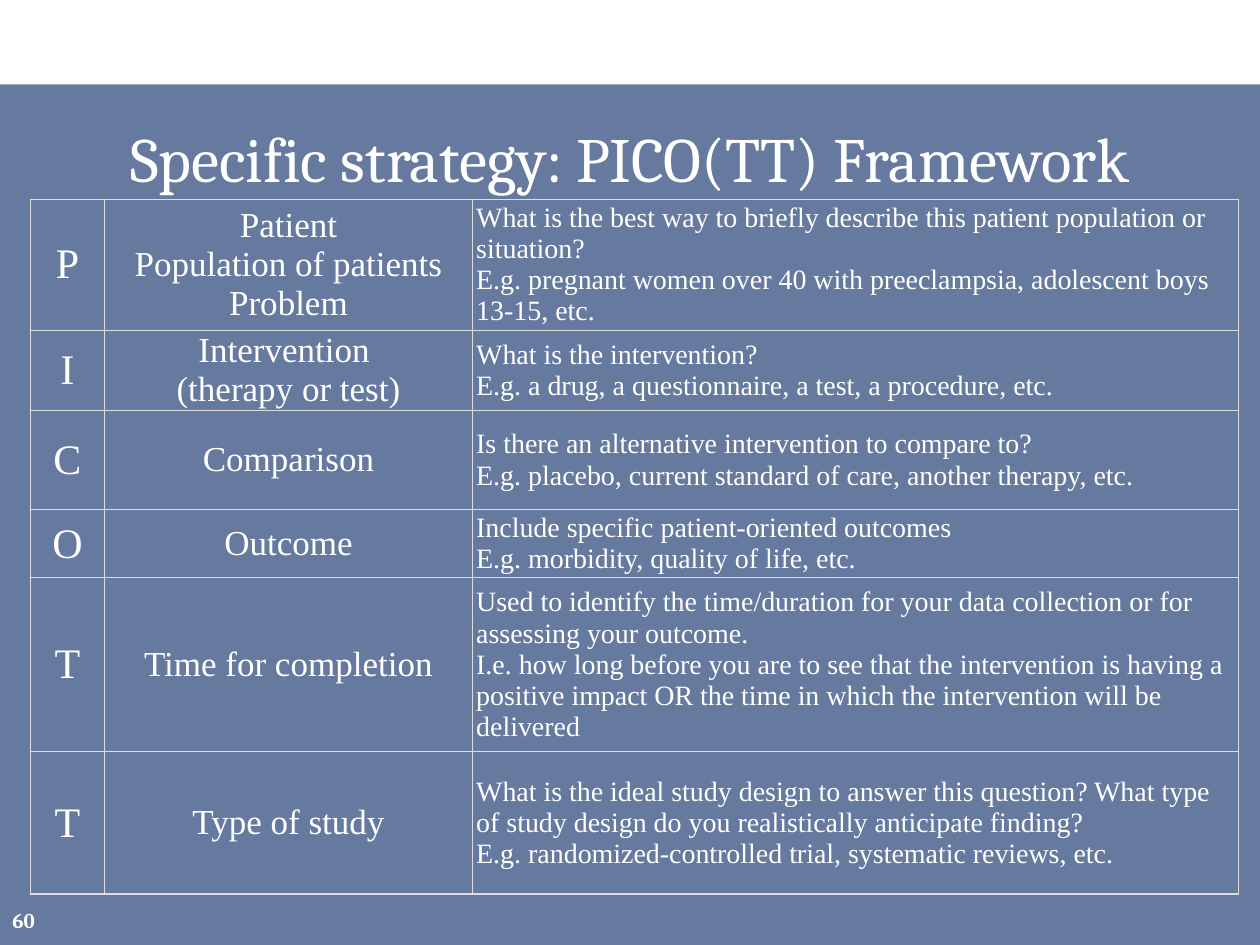
import lxml.etree
import pptx
import pptx.dml.color
import pptx.enum.shapes
import pptx.enum.text
import pptx.oxml
import pptx.oxml.ns
import pptx.util
from pptx.util import Inches

COLORS = {"panel": "002060", "text": "FFFFFF", "border": "DDDDDD"}
ALIGN = pptx.enum.text.PP_ALIGN
MIDDLE = pptx.enum.text.MSO_ANCHOR.MIDDLE
COLUMNS = [(0.59, 24, ALIGN.CENTER), (2.92, 20, ALIGN.CENTER), (6.08, 16, ALIGN.LEFT)]
FRAMEWORK = [
    (1.04, "P", "Patient\nPopulation of patients\nProblem",
     "What is the best way to briefly describe this patient population or situation?\n"
     "E.g. pregnant women over 40 with preeclampsia, adolescent boys 13-15, etc."),
    (0.54, "I", "Intervention \n(therapy or test)",
     "What is the intervention?\n"
     "E.g. a drug, a questionnaire, a test, a procedure, etc."),
    (0.79, "C", "Comparison",
     "Is there an alternative intervention to compare to?\n"
     "E.g. placebo, current standard of care, another therapy, etc."),
    (0.54, "O", "Outcome",
     "Include specific patient-oriented outcomes\n"
     "E.g. morbidity, quality of life, etc."),
    (1.38, "T", "Time for completion",
     "Used to identify the time/duration for your data collection or for assessing your outcome.\n"
     "I.e. how long before you are to see that the intervention is having a positive impact "
     "OR the time in which the intervention will be delivered"),
    (1.13, "T", "Type of study",
     "What is the ideal study design to answer this question? "
     "What type of study design do you realistically anticipate finding?\n"
     "E.g. randomized-controlled trial, systematic reviews, etc."),
]


class SlideBuilder:
    """Holds the style and the current slide, and adds each kind of element."""

    def __init__(self, slide, heading_font="Cambria", body_font="Times New Roman"):
        self.slide = slide
        self.heading_font = heading_font
        self.body_font = body_font

    def color(self, name):
        return pptx.dml.color.RGBColor.from_string(COLORS[name])

    def set_text(self, frame, text, size, font, align, bold=False):
        frame.text = text
        for paragraph in frame.paragraphs:
            paragraph.alignment = align
            paragraph.font.size = pptx.util.Pt(size)
            paragraph.font.name = font
            paragraph.font.bold = bold
            paragraph.font.color.rgb = self.color("text")

    def panel(self, left, top, width, height, opacity):
        panel = self.slide.shapes.add_shape(
            pptx.enum.shapes.MSO_SHAPE.RECTANGLE,
            Inches(left), Inches(top), Inches(width), Inches(height))
        panel.shadow.inherit = False
        panel.line.fill.background()
        panel.fill.solid()
        panel.fill.fore_color.rgb = self.color("panel")
        tint = panel._element.spPr.find(".//" + pptx.oxml.ns.qn("a:srgbClr"))
        lxml.etree.SubElement(tint, pptx.oxml.ns.qn("a:alpha"), val=str(opacity * 1000))
        self.slide.shapes._spTree.insert(2, panel._element)

    def title(self, text, left, top, width, height):
        title = self.slide.shapes.title
        title.left, title.top = Inches(left), Inches(top)
        title.width, title.height = Inches(width), Inches(height)
        self.set_text(title.text_frame, text, 36, self.heading_font, ALIGN.CENTER)
        title.text_frame.vertical_anchor = MIDDLE

    def page_number(self, text, left, top, width, height):
        box = self.slide.shapes.add_textbox(
            Inches(left), Inches(top), Inches(width), Inches(height))
        self.set_text(box.text_frame, text, 12, self.heading_font, ALIGN.LEFT, bold=True)
        box.text_frame.word_wrap = True
        box.text_frame.vertical_anchor = MIDDLE

    def border(self, cell):
        for position, side in enumerate(("lnL", "lnR", "lnT", "lnB")):
            line = pptx.oxml.parse_xml(
                f'<a:{side} {pptx.oxml.ns.nsdecls("a")} w="{pptx.util.Pt(0.75)}"><a:solidFill>'
                f'<a:srgbClr val="{COLORS["border"]}"/></a:solidFill></a:{side}>')
            cell._tc.get_or_add_tcPr().insert(position, line)

    def table(self, rows, columns, left, top):
        width = sum(column[0] for column in columns)
        height = sum(row[0] for row in rows)
        table = self.slide.shapes.add_table(
            len(rows), len(columns), Inches(left), Inches(top),
            Inches(width), Inches(height)).table
        table.first_row = table.horz_banding = False
        for column, (column_width, _, _) in zip(table.columns, columns):
            column.width = Inches(column_width)
        for row, (row_height, *texts) in zip(table.rows, rows):
            row.height = Inches(row_height)
            for cell, text, (_, size, align) in zip(row.cells, texts, columns):
                self.set_text(cell.text_frame, text, size, self.body_font, align)
                cell.vertical_anchor = MIDDLE
                cell.margin_left = cell.margin_right = Inches(0.03)
                cell.margin_top = cell.margin_bottom = Inches(0.01)
                cell.fill.background()
                self.border(cell)


def main():
    presentation = pptx.Presentation()
    presentation.slide_width, presentation.slide_height = Inches(10), Inches(7.5)
    builder = SlideBuilder(presentation.slides.add_slide(presentation.slide_layouts[5]))
    builder.panel(0, 0.67, 10, 6.83, opacity=60)
    builder.title("Specific strategy: PICO(TT) Framework", 0.25, 0.83, 9.5, 0.83)
    builder.table(FRAMEWORK, COLUMNS, 0.24, 1.58)
    builder.page_number("60", 0, 7.1, 0.5, 0.4)
    presentation.save("out.pptx")


if __name__ == "__main__":
    main()
